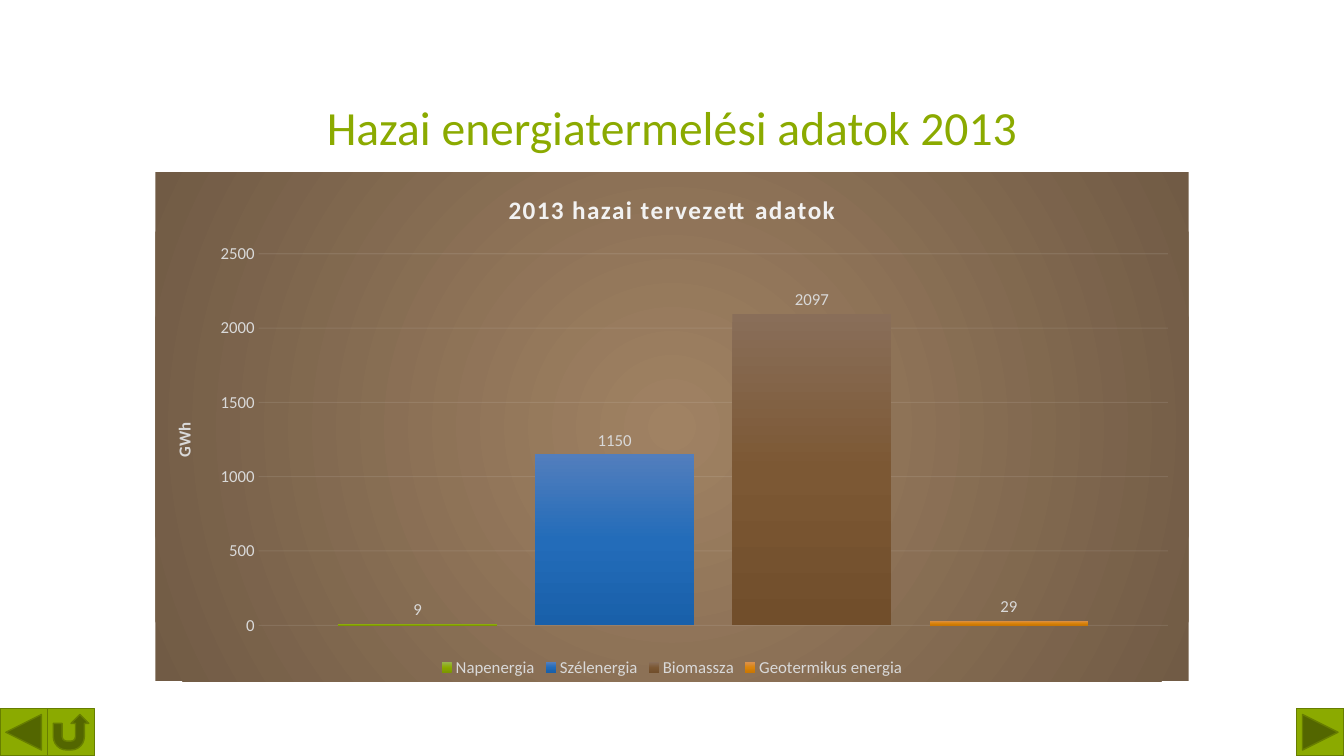
from lxml import etree
from pptx import Presentation
from pptx.chart.data import CategoryChartData
from pptx.dml.color import RGBColor
from pptx.enum.chart import XL_CHART_TYPE, XL_LABEL_POSITION, XL_LEGEND_POSITION, XL_TICK_MARK
from pptx.enum.shapes import MSO_SHAPE
from pptx.enum.text import MSO_ANCHOR, PP_ALIGN
from pptx.oxml import parse_xml
from pptx.oxml.ns import nsdecls, qn
from pptx.util import Inches, Pt

FONT = "Calibri"
COLORS = {
    "green": "8BAA00",
    "dark green": "677E00",
    "heading": "F2F2F2",
    "label": "D9D9D9",
}
BACKDROP = ("A08263", "715B45")
SOURCES = [
    ("Napenergia", 9, ("98B44B", "8BAA00", "7C9700")),
    ("Szélenergia", 1150, ("527EBD", "236CB9", "1960AA")),
    ("Biomassza", 2097, ("896E59", "7C5834", "714E2B")),
    ("Geotermikus energia", 29, ("DB914C", "DA850D", "CA7703")),
]
LINEAR = '<a:lin ang="5400000" scaled="0"/>'
RADIAL = '<a:path path="circle"><a:fillToRect l="50000" t="50000" r="50000" b="50000"/></a:path>'


def write(frame, text, size, color, bold=False, spacing=0):
    paragraph = frame.paragraphs[0]
    paragraph.alignment = PP_ALIGN.CENTER
    run = paragraph.add_run()
    run.text = text
    run.font.name, run.font.size, run.font.bold = FONT, Pt(size), bold
    run.font.color.rgb = RGBColor.from_string(COLORS[color])
    if spacing:
        run.font._element.set("spc", str(spacing))


def gradient(colors, direction):
    """Return a gradient fill element with evenly spaced colours."""
    stops = "".join(
        f'<a:gs pos="{100000 * i // (len(colors) - 1)}"><a:srgbClr val="{color}"/></a:gs>'
        for i, color in enumerate(colors)
    )
    return parse_xml(f'<a:gradFill {nsdecls("a")}><a:gsLst>{stops}</a:gsLst>{direction}</a:gradFill>')


deck = Presentation()
deck.slide_width, deck.slide_height = Inches(13.33), Inches(7.5)
slide = deck.slides.add_slide(deck.slide_layouts[6])

heading = slide.shapes.add_textbox(0, Inches(0.3), deck.slide_width, Inches(1.29)).text_frame
heading.word_wrap = True
heading.vertical_anchor = MSO_ANCHOR.BOTTOM
write(heading, "Hazai energiatermelési adatok 2013", size=34, color="green")

# Energy chart
energy = CategoryChartData()
energy.categories = ["1"]
for name, gwh, _ in SOURCES:
    energy.add_series(name, [gwh])
chart = slide.shapes.add_chart(
    XL_CHART_TYPE.COLUMN_CLUSTERED, Inches(1.54), Inches(1.71), Inches(10.25), Inches(5.05), energy
).chart
chart.font.name, chart.font.size = FONT, Pt(12)
chart.font.color.rgb = RGBColor.from_string(COLORS["label"])
write(chart.chart_title.text_frame, "2013 hazai tervezett adatok",
      size=18, color="heading", bold=True, spacing=100)
chart.chart_title.include_in_layout = False

chart.has_legend = True
chart.legend.position = XL_LEGEND_POSITION.BOTTOM
chart.legend.include_in_layout = False
legend_font = chart.legend.font
legend_font.name, legend_font.size = FONT, Pt(12)
legend_font.color.rgb = RGBColor.from_string(COLORS["label"])

chart.category_axis.visible = False
gwh_axis = chart.value_axis
gwh_axis.minimum_scale, gwh_axis.maximum_scale, gwh_axis.major_unit = 0, 2500, 500
gwh_axis.major_tick_mark = XL_TICK_MARK.NONE
gwh_axis.format.line.fill.background()
gwh_axis.tick_labels.font.name, gwh_axis.tick_labels.font.size = FONT, Pt(12)
gwh_axis.tick_labels.font.color.rgb = RGBColor.from_string(COLORS["label"])
write(gwh_axis.axis_title.text_frame, "GWh", size=12, color="label", bold=True)
grid_line = gwh_axis.major_gridlines.format.line
grid_line.width = Pt(0.75)
grid_line.color.rgb = RGBColor.from_string(COLORS["heading"])
grid_color = next(gwh_axis.major_gridlines._xAx.iter(qn("a:srgbClr")))
for grid_color in gwh_axis._element.find(qn("c:majorGridlines")).iter(qn("a:srgbClr")):
    etree.SubElement(grid_color, qn("a:alpha"), val="10000")

columns = chart.plots[0]
columns.gap_width, columns.overlap = 100, -24
columns.vary_by_categories = False
for series, (_, _, shades) in zip(columns.series, SOURCES):
    series.invert_if_negative = False
    series._element.get_or_add_spPr().append(gradient(shades, LINEAR))
    labels = series.data_labels
    labels.show_value = True
    labels.position = XL_LABEL_POSITION.OUTSIDE_END
    labels.font.name, labels.font.size = FONT, Pt(12)
    labels.font.color.rgb = RGBColor.from_string(COLORS["label"])

# Plot area as shares of the chart
plot_area = chart._chartSpace.chart.plotArea
for old_layout in plot_area.findall(qn("c:layout")):
    plot_area.remove(old_layout)
shares = "".join(f'<c:{side} val="{share}"/>' for side, share in zip("xywh", (0.1, 0.16, 0.88, 0.73)))
plot_area.insert(0, parse_xml(
    f'<c:layout {nsdecls("c")}><c:manualLayout><c:layoutTarget val="inner"/>'
    f'<c:xMode val="edge"/><c:yMode val="edge"/>{shares}</c:manualLayout></c:layout>'
))
backdrop = parse_xml(f'<c:spPr {nsdecls("c", "a")}><a:ln><a:noFill/></a:ln></c:spPr>')
backdrop.insert(0, gradient(BACKDROP, RADIAL))
chart._chartSpace.chart.addnext(backdrop)

# Navigation buttons along the bottom edge
side = Inches(0.47)
for button, left in (
    (MSO_SHAPE.ACTION_BUTTON_FORWARD_OR_NEXT, deck.slide_width - side),
    (MSO_SHAPE.ACTION_BUTTON_BACK_OR_PREVIOUS, 0),
    (MSO_SHAPE.ACTION_BUTTON_RETURN, side),
):
    navigation = slide.shapes.add_shape(button, left, deck.slide_height - side, side, side)
    navigation.shadow.inherit = False
    navigation.fill.solid()
    navigation.fill.fore_color.rgb = RGBColor.from_string(COLORS["green"])
    navigation.line.color.rgb = RGBColor.from_string(COLORS["dark green"])
    navigation.line.width = Pt(1)

deck.save("out.pptx")
